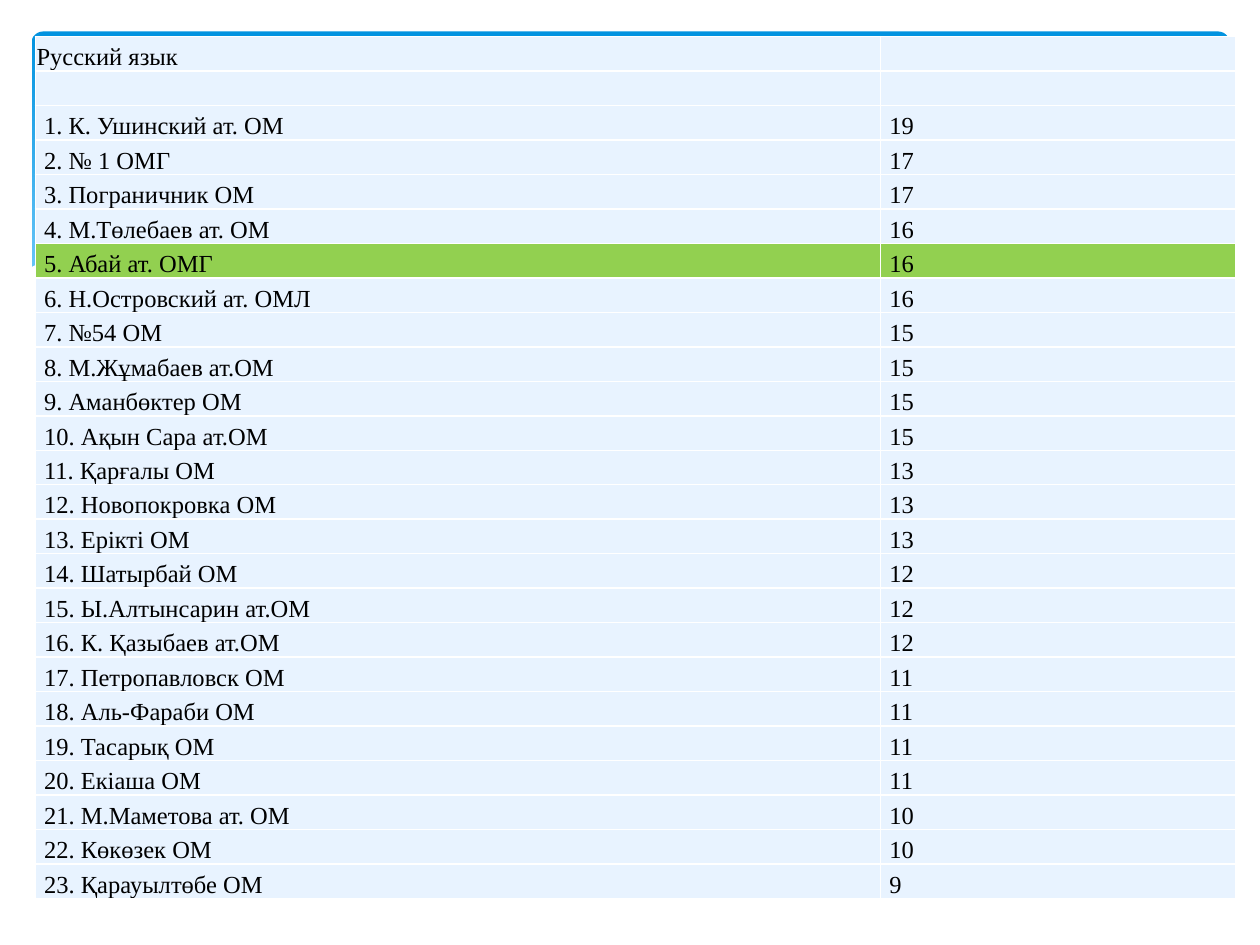
from lxml import etree
from pptx import Presentation
from pptx.dml.color import RGBColor
from pptx.enum.shapes import MSO_SHAPE as SHAPE
from pptx.enum.text import MSO_ANCHOR as ANCHOR
from pptx.oxml import parse_xml
from pptx.oxml.ns import nsdecls, qn
from pptx.util import Inches, Pt

COLORS = {"text": "000000", "white": "FFFFFF", "row": "E8F3FF", "marked": "92D050",
          "sky_top": "0293E0", "sky_bottom": "83D3FE"}
FONT = "Times New Roman"
TITLE = "Русский язык"
MARKED_SCHOOL = "Абай ат. ОМГ"
SCORES = [
    ("К. Ушинский ат. ОМ", 19), ("№ 1 ОМГ", 17), ("Пограничник ОМ", 17),
    ("М.Төлебаев ат. ОМ", 16), (MARKED_SCHOOL, 16), ("Н.Островский ат. ОМЛ", 16),
    ("№54 ОМ", 15), ("М.Жұмабаев ат.ОМ", 15), ("Аманбөктер ОМ", 15),
    ("Ақын Сара ат.ОМ", 15), ("Қарғалы ОМ", 13), ("Новопокровка ОМ", 13),
    ("Ерікті ОМ", 13), ("Шатырбай ОМ", 12), ("Ы.Алтынсарин ат.ОМ", 12),
    ("К. Қазыбаев ат.ОМ", 12), ("Петропавловск ОМ", 11), ("Аль-Фараби ОМ", 11),
    ("Тасарық ОМ", 11), ("Екіаша ОМ", 11), ("М.Маметова ат. ОМ", 10),
    ("Көкөзек ОМ", 10), ("Қарауылтөбе ОМ", 9),
]
WAVE = [(9.54, 0.62), (9.07, 0.78), (8.52, 0.89), (7.86, 0.93), (7.03, 0.88),
        (6.03, 0.74), (5.06, 0.55), (4.24, 0.36), (3.42, 0.18), (2.69, 0.06),
        (2.07, 0.01), (1.54, 0), (1.09, 0.03), (0.72, 0.09), (0.44, 0.15),
        (0.23, 0.21), (0.06, 0.26), (0, 0.29), (0, 1.45), (9.54, 1.45)]


def rgb(name):
    """Return a palette colour."""
    return RGBColor.from_string(COLORS[name])


def add_backdrop(s, x, y, w, h):
    """Draw the gradient panel with a white wave over its lower edge."""
    sky = s.shapes.add_shape(SHAPE.ROUNDED_RECTANGLE, Inches(x), Inches(y), Inches(w), Inches(h))
    sky.adjustments[0] = 0.034
    sky.shadow.inherit = False
    sky.line.fill.background()
    sky.fill.gradient()
    sky.fill.gradient_angle = 270
    for stop, pos, name in zip(sky.fill.gradient_stops, (0, 0.9), ("sky_top", "sky_bottom")):
        stop.position = pos
        stop.color.rgb = rgb(name)

    points = [(Inches(x - 0.02 + dx), Inches(y + 1.59 + dy)) for dx, dy in WAVE]
    builder = s.shapes.build_freeform(*points[0])
    builder.add_line_segments(points[1:], close=True)
    wave = builder.convert_to_shape()
    wave.shadow.inherit = False
    wave.fill.solid()
    wave.fill.fore_color.rgb = rgb("white")
    wave.line.fill.background()


def style_cell(cell, text, fill, indent):
    """Fill one table cell and give it text, insets and white borders."""
    cell.text = text
    cell.vertical_anchor = ANCHOR.BOTTOM
    cell.margin_left = Inches(indent)
    cell.margin_top = cell.margin_right = Inches(0.01)
    cell.margin_bottom = 0
    cell.fill.solid()
    cell.fill.fore_color.rgb = rgb(fill)
    p = cell.text_frame.paragraphs[0]
    p.font.size = Pt(14)
    p.font.name = FONT
    p.font.color.rgb = rgb("text")
    if not text:
        etree.SubElement(p._p, qn("a:endParaRPr"), sz="1400")
    tc_pr = cell._tc.get_or_add_tcPr()
    for i, side in enumerate(("lnL", "lnR", "lnT", "lnB")):
        tc_pr.insert(i, parse_xml(
            f'<a:{side} {nsdecls("a")} w="12700"><a:solidFill>'
            f'<a:srgbClr val="{COLORS["white"]}"/></a:solidFill></a:{side}>'))


def add_score_table(s, x, y, w, h):
    """Place the ranked table of schools and scores."""
    rows = [(TITLE, ""), ("", "")]
    rows += [(f"{n}. {school}", str(score)) for n, (school, score) in enumerate(SCORES, 1)]
    table = s.shapes.add_table(len(rows), 2, Inches(x), Inches(y), Inches(w), Inches(h)).table
    table.first_row = table.horz_banding = False
    table.columns[0].width = Inches(6.71)
    table.columns[1].width = Inches(w - 6.71)
    for i, row in enumerate(rows):
        table.rows[i].height = Inches(h / len(rows))
        fill = "marked" if row[0].endswith(MARKED_SCHOOL) else "row"
        for j, text in enumerate(row):
            style_cell(table.cell(i, j), text, fill, 0.07 if i > 1 else 0.01)


def main():
    """Build and save the slide."""
    prs = Presentation()
    prs.slide_width, prs.slide_height = Inches(10), Inches(7.5)
    s = prs.slides.add_slide(prs.slide_layouts[6])
    add_backdrop(s, 0.25, 0.25, 9.51, 2.7)
    add_score_table(s, 0.28, 0.29, 9.53, 6.85)
    prs.save("out.pptx")


if __name__ == "__main__":
    main()
